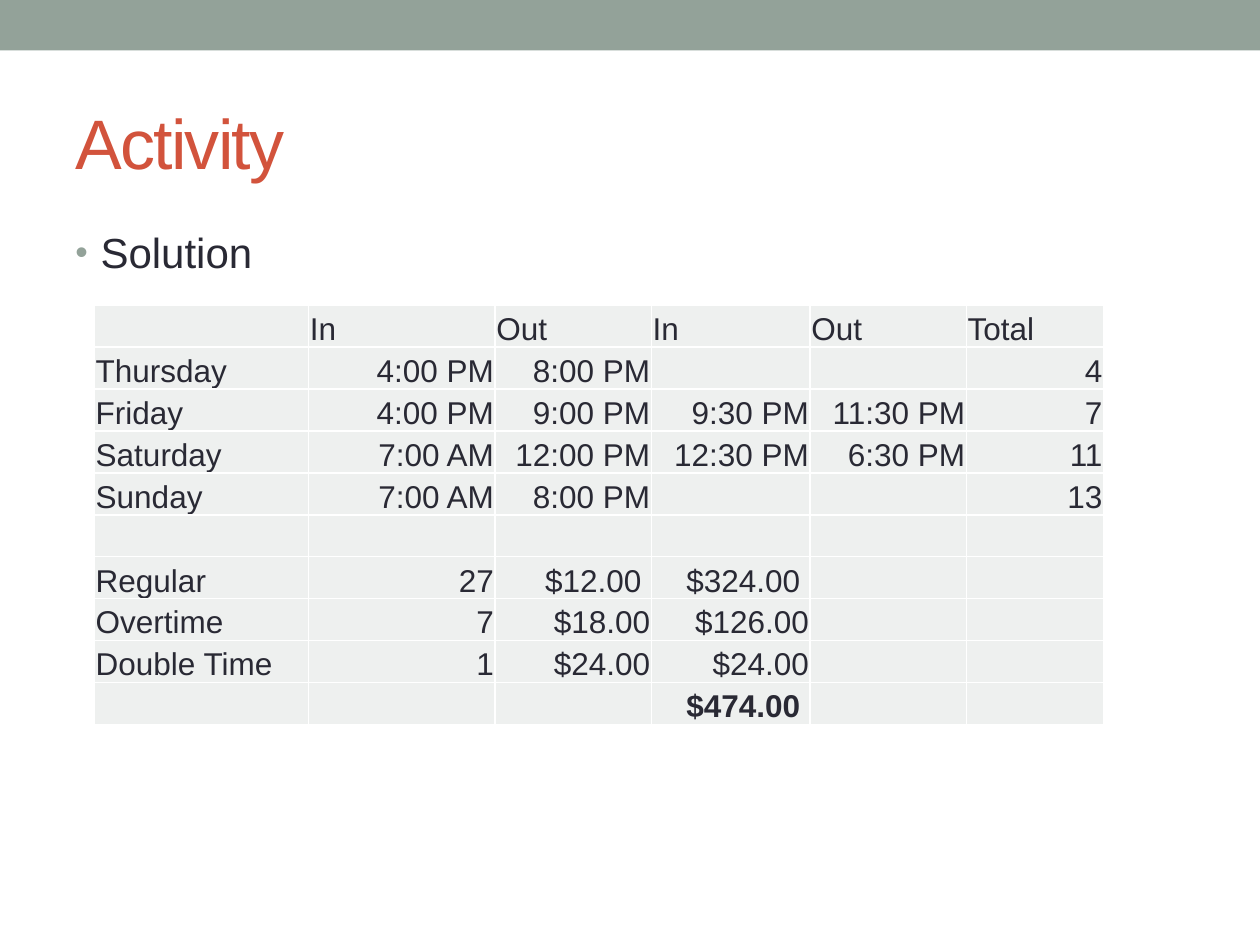
import pptx
import pptx.dml.color
import pptx.enum.shapes
import pptx.enum.text
import pptx.oxml
import pptx.oxml.ns
import pptx.util
from pptx.util import Pt

FONT = "Arial"
SAGE, RED, INK, PALE, WHITE = "93A299", "D2533C", "292934", "EEF0EF", "FFFFFF"

COLUMN_WIDTHS = [122.4, 106.56, 89.28, 90.72, 89.28, 78.48]
TIMESHEET = [
    ["", "In", "Out", "In", "Out", "Total"],
    ["Thursday", "4:00 PM", "8:00 PM", "", "", "4"],
    ["Friday", "4:00 PM", "9:00 PM", "9:30 PM", "11:30 PM", "7"],
    ["Saturday", "7:00 AM", "12:00 PM", "12:30 PM", "6:30 PM", "11"],
    ["Sunday", "7:00 AM", "8:00 PM", "", "", "13"],
    ["", "", "", "", "", ""],
    ["Regular", "27", "$12.00 ", "$324.00 ", "", ""],
    ["Overtime", "7", "$18.00", "$126.00", "", ""],
    ["Double Time", "1", "$24.00", "$24.00", "", ""],
    ["", "", "", "$474.00 ", "", ""],
]


def color(hex_string):
    return pptx.dml.color.RGBColor.from_string(hex_string)


def element(xml):
    namespace = pptx.oxml.ns.nsdecls("a")
    return pptx.oxml.parse_xml(xml.replace("/>", f" {namespace}/>", 1) if xml.endswith("/>")
                               else xml.replace(" ", f" {namespace} ", 1))


def set_font(paragraph, size, hex_string, bold=False):
    font = paragraph.font
    font.name, font.size, font.bold = FONT, Pt(size), bold
    font.color.rgb = color(hex_string)


def add_text(slide, box, text, size, hex_string, anchor):
    frame = slide.shapes.add_textbox(*map(Pt, box)).text_frame
    frame.word_wrap = True
    frame.vertical_anchor = anchor
    paragraph = frame.paragraphs[0]
    paragraph.text = text
    set_font(paragraph, size, hex_string)
    return paragraph


def add_band(slide, box):
    band = slide.shapes.add_shape(pptx.enum.shapes.MSO_SHAPE.RECTANGLE, *map(Pt, box))
    band.shadow.inherit = False
    band.fill.solid()
    band.fill.fore_color.rgb = color(SAGE)
    band.line.fill.background()


def add_title(slide, box, text):
    paragraph = add_text(slide, box, text, 40, RED, pptx.enum.text.MSO_ANCHOR.MIDDLE)
    # Tightened letter spacing, in hundredths of a point
    paragraph.runs[0].font._element.set("spc", "-100")


def add_bullet(slide, box, text):
    paragraph = add_text(slide, box, text, 24, INK, pptx.enum.text.MSO_ANCHOR.TOP)
    paragraph.space_before = Pt(2.5)
    properties = paragraph._p.get_or_add_pPr()
    properties.set("marL", str(Pt(14.4)))
    properties.set("indent", str(-Pt(14.4)))
    bullet_parts = [
        f'<a:buClr ><a:srgbClr val="{SAGE}"/></a:buClr>',
        '<a:buSzPct val="85000"/>',
        '<a:buFont typeface="Arial"/>',
        '<a:buChar char="•"/>',
    ]
    position = list(properties).index(properties.find(pptx.oxml.ns.qn("a:defRPr")))
    for offset, xml in enumerate(bullet_parts):
        properties.insert(position + offset, element(xml))


def style_cell(cell):
    cell.margin_left = cell.margin_right = cell.margin_top = Pt(0.72)
    cell.margin_bottom = Pt(0)
    cell.vertical_anchor = pptx.enum.text.MSO_ANCHOR.BOTTOM
    cell.fill.solid()
    cell.fill.fore_color.rgb = color(PALE)
    # Borders come before the fill
    for position, side in enumerate(("lnL", "lnR", "lnT", "lnB")):
        cell._tc.get_or_add_tcPr().insert(position, element(
            f'<a:{side} w="{Pt(1)}"><a:solidFill><a:srgbClr val="{WHITE}"/>'
            f'</a:solidFill></a:{side}>'))


def add_timesheet(slide, box, rows):
    table = slide.shapes.add_table(len(rows), len(rows[0]), *map(Pt, box)).table
    table.first_row = table.horz_banding = False
    for column, width in zip(table.columns, COLUMN_WIDTHS):
        column.width = Pt(width)
    for row_index, row in enumerate(rows):
        table.rows[row_index].height = Pt(box[3] / len(rows))
        for column_index, text in enumerate(row):
            cell = table.cell(row_index, column_index)
            style_cell(cell)
            paragraph = cell.text_frame.paragraphs[0]
            paragraph.text = text
            # Headings and labels stand left, values right; the grand total is bold
            is_label = row_index == 0 or column_index == 0
            paragraph.alignment = (pptx.enum.text.PP_ALIGN.LEFT if is_label
                                   else pptx.enum.text.PP_ALIGN.RIGHT)
            set_font(paragraph, 18, INK, bold=row_index == len(rows) - 1)
            if not text:
                # An empty cell keeps its row height through its end mark
                paragraph._p.append(element('<a:endParaRPr sz="1800"/>'))


def main():
    presentation = pptx.Presentation()
    presentation.slide_width, presentation.slide_height = Pt(720), Pt(540)
    slide = presentation.slides.add_slide(presentation.slide_layouts[6])
    add_band(slide, (0, 0, 720, 28.8))
    add_title(slide, (36, 41.76, 648, 77.76), "Activity")
    add_bullet(slide, (36, 126, 648, 383.76), "Solution")
    add_timesheet(slide, (54, 174.24, 576, 240), TIMESHEET)
    presentation.save("out.pptx")


if __name__ == "__main__":
    main()
